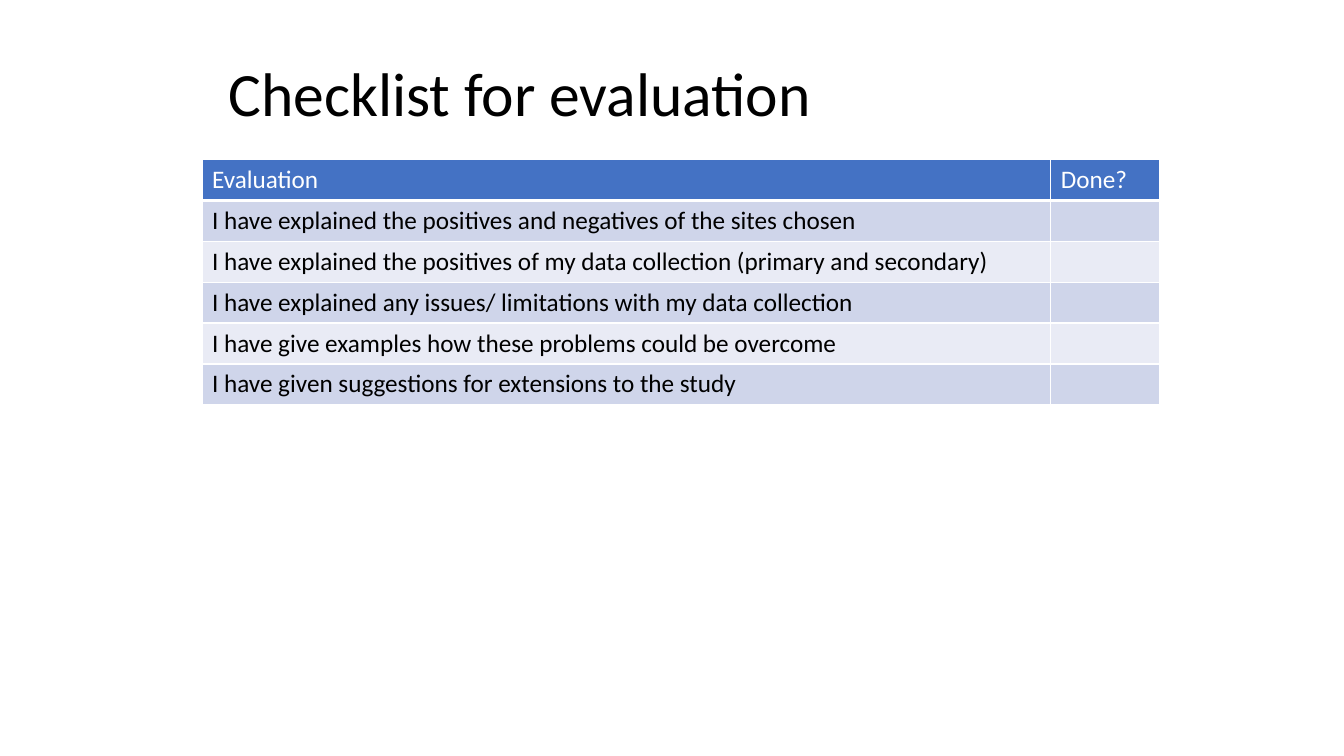
from pptx import Presentation
from pptx.dml.color import RGBColor
from pptx.enum.text import MSO_ANCHOR as Anchor, PP_ALIGN as Align
from pptx.util import Cm, Pt
from lxml.etree import SubElement
from pptx.oxml.ns import qn

BLACK = RGBColor(0x00, 0x00, 0x00)
WHITE = RGBColor(0xFF, 0xFF, 0xFF)
HEADER_BLUE = RGBColor(0x44, 0x72, 0xC4)
BANDS = [RGBColor(0xE9, 0xEB, 0xF5), RGBColor(0xCF, 0xD5, 0xEA)]

CHECKS = [
    "I have explained the positives and negatives of the sites chosen",
    "I have explained the positives of my data collection (primary and secondary)",
    "I have explained any issues/ limitations with my data collection",
    "I have give examples how these problems could be overcome",
    "I have given suggestions for extensions to the study",
]
ROWS = [("Evaluation", "Done?")] + [(check, "") for check in CHECKS]


def format_font(font, size, color):
    values = {"name": "Calibri", "size": Pt(size), "bold": False}
    for name, value in values.items():
        setattr(font, name, value)
    font.color.rgb = color


def add_border(cell, side, width):
    line = SubElement(cell._tc.get_or_add_tcPr(), qn(f"a:ln{side}"), w=str(Pt(width)))
    fill = SubElement(line, qn("a:solidFill"))
    SubElement(fill, qn("a:srgbClr"), val=str(WHITE))


deck = Presentation()
deck.slide_width, deck.slide_height = Cm(33.87), Cm(19.05)
page = deck.slides.add_slide(deck.slide_layouts[5])

# Title
title = page.shapes.title
title_place = {"left": 5.5, "top": 0.85, "width": 22.86, "height": 3.18}
for name, value in title_place.items():
    setattr(title, name, Cm(value))
title.text_frame.text = "Checklist for evaluation"
title.text_frame.vertical_anchor = Anchor.MIDDLE
para = title.text_frame.paragraphs[0]
para.alignment = Align.LEFT
para.line_spacing = 0.9
format_font(para.runs[0].font, 44, BLACK)

# Checklist table
table = page.shapes.add_table(
    len(ROWS), 2, Cm(5.09), Cm(4.02), Cm(24.13), Cm(6.18)).table
for column, width in zip(table.columns, (21.39, 2.74)):
    column.width = Cm(width)

for row_index, texts in enumerate(ROWS):
    is_header = row_index == 0
    table.rows[row_index].height = Cm(0.9 if is_header else 1.03)
    for column_index, text in enumerate(texts):
        cell = table.cell(row_index, column_index)
        for side in "LRTB":
            add_border(cell, side, 3 if is_header and side == "B" else 1)
        cell.fill.solid()
        cell.fill.fore_color.rgb = HEADER_BLUE if is_header else BANDS[row_index % 2]
        if text:
            cell.text = text
            span = cell.text_frame.paragraphs[0].runs[0]
            format_font(span.font, 18, WHITE if is_header else BLACK)

deck.save("out.pptx")
